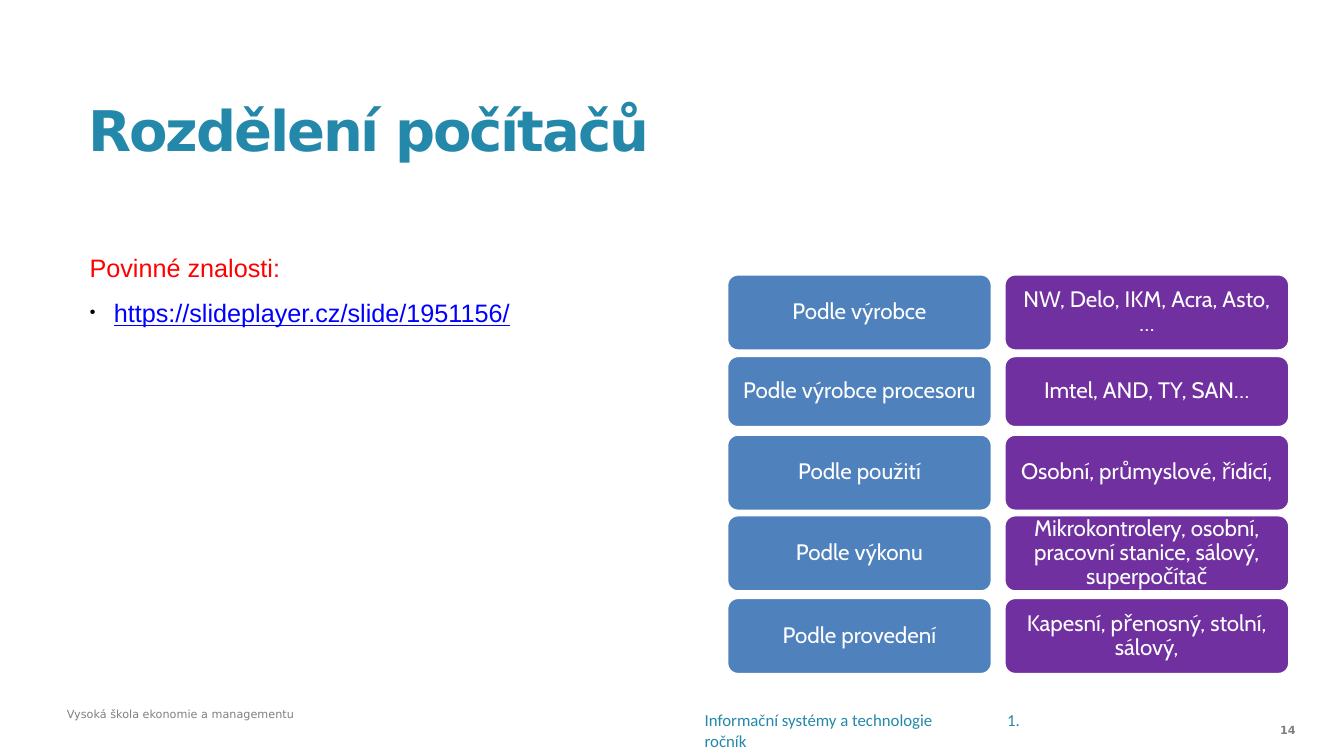
import pptx
import pptx.util
import pptx.dml.color
import pptx.enum.shapes
import pptx.enum.text
import pptx.oxml

RGBColor = pptx.dml.color.RGBColor
ALIGN = pptx.enum.text.PP_ALIGN
ANCHOR = pptx.enum.text.MSO_ANCHOR
FIT = pptx.enum.text.MSO_AUTO_SIZE
inches, points = pptx.util.Inches, pptx.util.Pt

TEAL = RGBColor(0x23, 0x88, 0xA9)
GRAY = RGBColor(0x80, 0x80, 0x80)
RED = RGBColor(0xFF, 0, 0)
LINK_BLUE = RGBColor(0, 0, 0xFF)
BLUE = RGBColor(0x4F, 0x81, 0xBD)
PURPLE = RGBColor(0x70, 0x30, 0xA0)
WHITE = RGBColor(0xFF, 0xFF, 0xFF)

# Content
HEADING = "Rozdělení počítačů"
KNOWLEDGE = "Povinné znalosti:"
LINK = "https://slideplayer.cz/slide/1951156/"
COURSE = "Informační systémy a technologie\t1. ročník"
SCHOOL = "Vysoká škola ekonomie a managementu"
PAGE = "14"
CRITERIA = [  # criterion, examples, top, height
    ("Podle výrobce", "NW, Delo, IKM, Acra, Asto, …", 2.72, 0.76),
    ("Podle výrobce procesoru", "Imtel, AND, TY, SAN…", 3.53, 0.71),
    ("Podle použití", "Osobní, průmyslové, řídící,", 4.31, 0.76),
    ("Podle výkonu", "Mikrokontrolery, osobní, pracovní stanice, sálový, superpočítač", 5.11, 0.76),
    ("Podle provedení", "Kapesní, přenosný, stolní, sálový,", 5.93, 0.76),
]

# Left edge, width and fill of each column of criteria
COLUMNS = [(7.21, 2.63, BLUE), (9.96, 2.83, PURPLE)]
CORNER = 0.11
COURSE_TAB = 3.0

# Text formats
HEADING_FONT = dict(name="DejaVu Sans", size=points(40), bold=True)
COURSE_FONT = dict(name="Calibri", size=points(12))
SCHOOL_FONT = dict(name="DejaVu Sans", size=points(8))
PAGE_FONT = dict(SCHOOL_FONT, bold=True)
BODY_FONT = dict(name="Arial", size=points(18))
LINK_FONT = dict(BODY_FONT, underline=True)
CELL_FONT = dict(name="Cabin", size=points(16))


def apply(target, values):
    for key, value in values.items():
        setattr(target, key, value)


def write(paragraph, text, font, color, align=ALIGN.LEFT, spacing=1.0):
    apply(paragraph, dict(alignment=align, line_spacing=spacing))
    run = paragraph.add_run()
    run.text = text
    apply(run.font, font)
    run.font.color.rgb = color
    return run


def set_frame(shape, anchor=ANCHOR.MIDDLE, side=0.1, edge=0.05, wrap=True, fit=FIT.NONE):
    frame = shape.text_frame
    apply(frame, dict(
        word_wrap=wrap, auto_size=fit, vertical_anchor=anchor,
        margin_left=inches(side), margin_right=inches(side),
        margin_top=inches(edge), margin_bottom=inches(edge)))
    return frame


def add_text(slide, box, **frame_values):
    return set_frame(slide.shapes.add_textbox(*map(inches, box)), **frame_values)


def add_properties(paragraph, *elements):
    namespace = 'xmlns:a="http://schemas.openxmlformats.org/drawingml/2006/main"'
    properties = paragraph._p.get_or_add_pPr()
    for element in elements:
        wrapped = pptx.oxml.parse_xml(f"<a:pPr {namespace}>{element}</a:pPr>")
        properties.append(wrapped[0])
    return properties


def add_bullet(paragraph):
    properties = add_properties(
        paragraph,
        '<a:buClr><a:srgbClr val="000000"/></a:buClr>',
        '<a:buSzPct val="30000"/>',
        '<a:buChar char="●"/>')
    properties.set("marL", str(inches(0.24)))
    properties.set("indent", str(-inches(0.24)))


def add_cell(slide, text, box, fill):
    cell = slide.shapes.add_shape(
        pptx.enum.shapes.MSO_SHAPE.ROUNDED_RECTANGLE, *map(inches, box))
    cell.adjustments[0] = CORNER / box[3]
    cell.shadow.inherit = False
    cell.fill.solid()
    cell.fill.fore_color.rgb = fill
    cell.line.color.rgb = WHITE
    cell.line.width = points(2)
    frame = set_frame(cell, side=0.1, edge=0.07)
    write(frame.paragraphs[0], text, CELL_FONT, WHITE, ALIGN.CENTER, 0.9)


def main():
    deck = pptx.Presentation()
    apply(deck, dict(slide_width=inches(13.33), slide_height=inches(7.5)))
    slide = deck.slides.add_slide(deck.slide_layouts[5])

    # Title
    title = slide.shapes.title
    apply(title, dict(left=inches(0.88), top=inches(1.14),
                      width=inches(12.3), height=inches(0.36)))
    frame = set_frame(title, side=0, edge=0)
    heading = write(frame.paragraphs[0], HEADING, HEADING_FONT, TEAL, spacing=0.9)
    heading.font._element.set("spc", "-150")

    # Footer: course, page number and school
    course = add_text(slide, (6.89, 7.09, 3.49, 0.31)).paragraphs[0]
    add_properties(
        course, f'<a:tabLst><a:tab pos="{inches(COURSE_TAB)}" algn="l"/></a:tabLst>')
    write(course, COURSE, COURSE_FONT, TEAL)
    page = add_text(slide, (12.11, 7.09, 0.84, 0.31))
    write(page.paragraphs[0], PAGE, PAGE_FONT, GRAY, ALIGN.RIGHT)
    school = add_text(slide, (0.56, 6.97, 2.46, 0.23), anchor=ANCHOR.TOP,
                      wrap=False, fit=FIT.SHAPE_TO_FIT_TEXT)
    write(school.paragraphs[0], SCHOOL, SCHOOL_FONT, GRAY, ALIGN.RIGHT)

    # Required knowledge
    body = add_text(slide, (0.79, 2.3, 12, 2.61), anchor=ANCHOR.TOP)
    write(body.paragraphs[0], KNOWLEDGE, BODY_FONT, RED, spacing=1.5)
    source = body.add_paragraph()
    add_bullet(source)
    write(source, LINK, LINK_FONT, LINK_BLUE, spacing=1.5)

    # Criteria and their examples
    for criterion, examples, top, height in CRITERIA:
        for text, (left, width, fill) in zip((criterion, examples), COLUMNS):
            add_cell(slide, text, (left, top, width, height), fill)

    deck.save("out.pptx")


if __name__ == "__main__":
    main()
